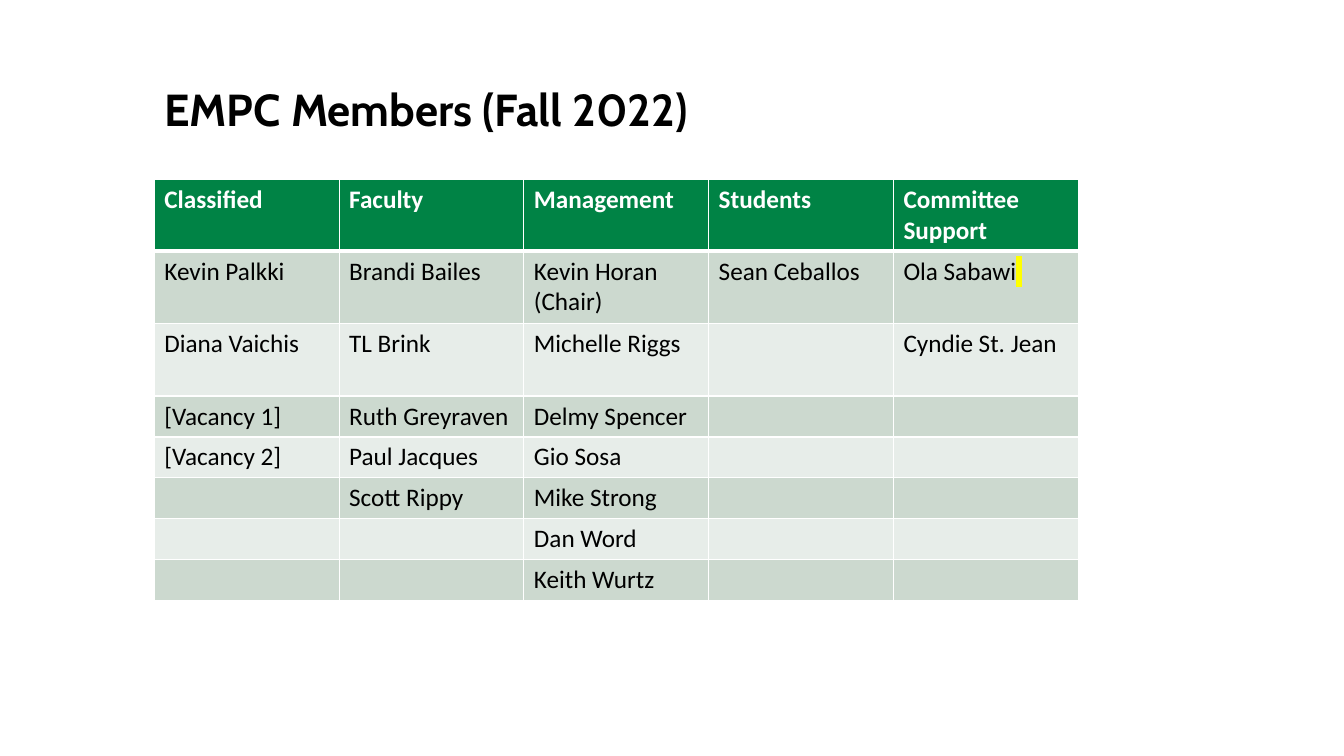
from dataclasses import dataclass

from lxml import etree
from pptx import Presentation
from pptx.dml.color import RGBColor
from pptx.enum.text import MSO_ANCHOR, MSO_AUTO_SIZE, PP_ALIGN
from pptx.oxml.ns import qn
from pptx.util import Emu, Pt

TOP = MSO_ANCHOR.TOP
LEFT = PP_ALIGN.LEFT
FIXED = MSO_AUTO_SIZE.NONE
TITLE_ONLY = 5

WHITE, BLACK, YELLOW = "FFFFFF", "000000", "FFFF00"
GREEN, SAGE, MIST = "008345", "CCD9CF", "E7EDE9"

COL = 176
TALL, LOW = 69, 39
MARKED = "Ola Sabawi"


@dataclass(frozen=True)
class Row:
    names: tuple
    height: int = LOW


ROWS = (
    Row(("Classified", "Faculty", "Management", "Students", "Committee Support"), 67),
    Row(("Kevin Palkki", "Brandi Bailes", "Kevin Horan (Chair)", "Sean Ceballos", MARKED), TALL),
    Row(("Diana Vaichis", "TL Brink", "Michelle Riggs", "", "Cyndie St. Jean"), TALL),
    Row(("[Vacancy 1]", "Ruth Greyraven", "Delmy Spencer", "", "")),
    Row(("[Vacancy 2]", "Paul Jacques", "Gio Sosa", "", "")),
    Row(("", "Scott Rippy", "Mike Strong", "", "")),
    Row(("", "", "Dan Word", "", "")),
    Row(("", "", "Keith Wurtz", "", "")),
)


def px(n: int) -> Emu:
    return Emu(n * 9525)


def rgb(code: str) -> RGBColor:
    return RGBColor.from_string(code)


def style(font, face: str, size: int, color: str, bold: bool) -> None:
    font.name = face
    font.size = Pt(size)
    font.bold = bold
    font.color.rgb = rgb(color)


def edge(cell, top: int, base: int) -> None:
    """Draw white cell borders; top and base are widths in points."""
    props = cell._tc.get_or_add_tcPr()
    sides = (("L", 1), ("R", 1), ("T", top), ("B", base))
    for i, (side, width) in enumerate(sides):
        line = etree.Element(qn(f"a:ln{side}"), w=str(Pt(width)))
        fill = etree.SubElement(line, qn("a:solidFill"))
        etree.SubElement(fill, qn("a:srgbClr"), val=WHITE)
        props.insert(i, line)


def mark(run) -> None:
    """Highlight a run that already has a colour."""
    light = etree.Element(qn("a:highlight"))
    etree.SubElement(light, qn("a:srgbClr"), val=YELLOW)
    run._r.get_or_add_rPr().find(qn("a:solidFill")).addnext(light)


def add_title(slide) -> None:
    title = slide.shapes.title
    title.left, title.top = px(147), px(79)
    title.width, title.height = px(864), px(48)
    frame = title.text_frame
    frame.text = "EMPC Members (Fall 2022)"
    frame.auto_size = FIXED
    frame.vertical_anchor = TOP
    para = frame.paragraphs[0]
    para.alignment = LEFT
    para.line_spacing = 0.9
    style(para.runs[0].font, "Cabin", 32, BLACK, True)


def fill_cell(cell, name: str, r: int) -> None:
    head = r == 0
    cell.fill.solid()
    cell.fill.fore_color.rgb = rgb(GREEN if head else SAGE if r % 2 else MIST)
    edge(cell, 3 if r == 1 else 1, 3 if head else 1)
    para = cell.text_frame.paragraphs[0]
    para.text = name
    if name == MARKED:
        para.add_run().text = " "
    for run in para.runs:
        style(run.font, "Calibri", 18, WHITE if head else BLACK, head)
    if name == MARKED:
        mark(para.runs[-1])


def add_members(slide) -> None:
    count = len(ROWS[0].names)
    high = sum(row.height for row in ROWS)
    table = slide.shapes.add_table(
        len(ROWS), count, px(147), px(171), px(COL * count), px(high)
    ).table
    for col in table.columns:
        col.width = px(COL)
    for r, row in enumerate(ROWS):
        table.rows[r].height = px(row.height)
        for c, name in enumerate(row.names):
            fill_cell(table.cell(r, c), name, r)


def main() -> None:
    deck = Presentation()
    deck.slide_width, deck.slide_height = px(1280), px(720)
    slide = deck.slides.add_slide(deck.slide_layouts[TITLE_ONLY])
    add_title(slide)
    add_members(slide)
    deck.save("out.pptx")


if __name__ == "__main__":
    main()
